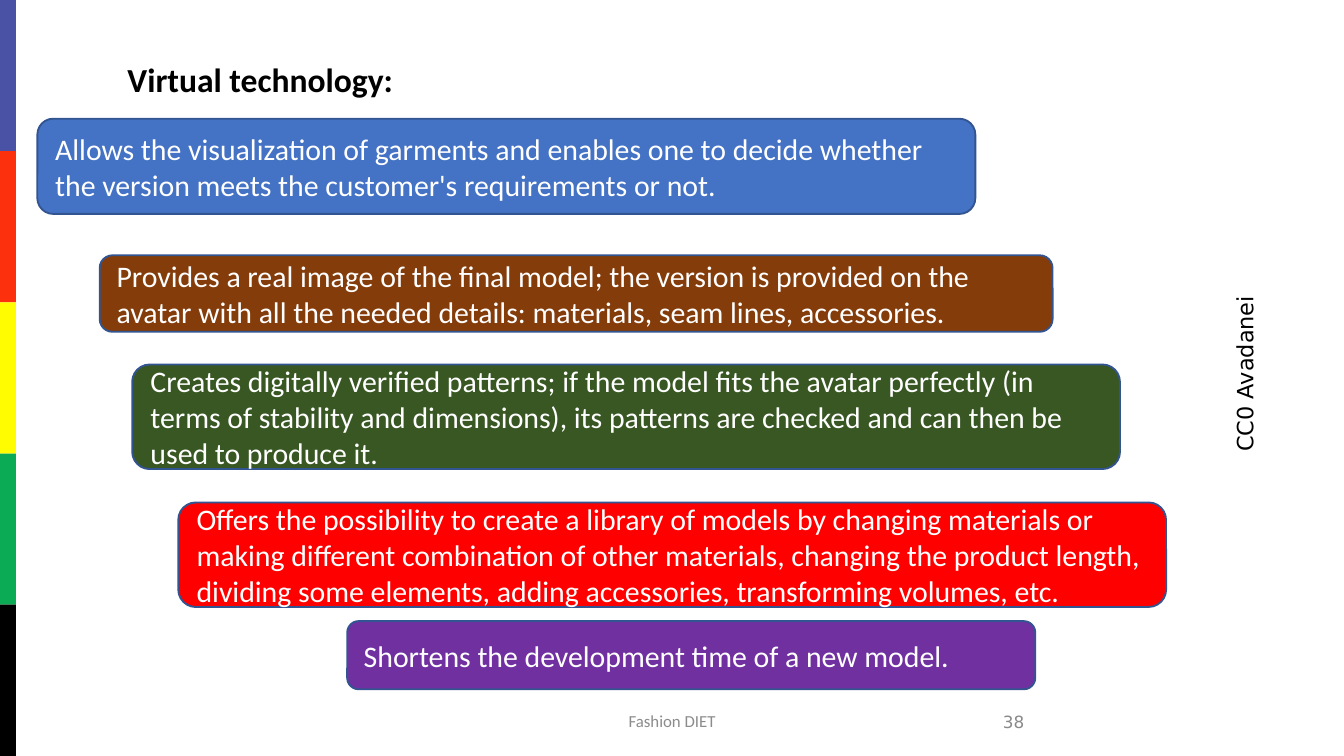
from pptx import Presentation
from pptx.dml.color import RGBColor
from pptx.enum.shapes import MSO_SHAPE as Shape
from pptx.enum.text import MSO_ANCHOR as Anchor, PP_ALIGN as Align
from pptx.util import Pt


def color(value):
    return RGBColor.from_string(value)


def write(shape, text, font_format, align=Align.LEFT, anchor=Anchor.MIDDLE):
    frame = shape.text_frame
    frame.word_wrap = True
    frame.vertical_anchor = anchor
    paragraph = frame.paragraphs[0]
    paragraph.alignment = align
    run = paragraph.add_run()
    run.text = text
    for name, value in font_format.items():
        if name == "color":
            run.font.color.rgb = color(value)
        else:
            setattr(run.font, name, value)


presentation = Presentation()
presentation.slide_width = Pt(720)
presentation.slide_height = Pt(405)
slide = presentation.slides.add_slide(presentation.slide_layouts[6])

# Colour stripe down the left edge
stripe_colors = ["4952A4", "FC300D", "FFFB00", "0BAA54", "000000"]
stripe_height = 405 / len(stripe_colors)
for index, fill in enumerate(stripe_colors):
    shape = slide.shapes.add_shape(
        Shape.RECTANGLE, 0, Pt(index * stripe_height), Pt(8.6), Pt(stripe_height))
    shape.shadow.inherit = False
    shape.fill.solid()
    shape.fill.fore_color.rgb = color(fill)
    shape.line.fill.background()

# Title, footer, page number and vertical credit
title_format = {"name": "Calibri", "size": Pt(18), "bold": True, "color": "000000"}
footer_format = {"name": "Calibri", "size": Pt(9), "color": "8C8C8C"}
number_format = {"name": "DejaVu Sans", "size": Pt(9), "color": "898989"}
credit_format = {"name": "DejaVu Sans", "size": Pt(12), "color": "000000"}
labels = [
    ("Virtual technology:", (61.2, 28.2, 211.7, 29), title_format, Align.LEFT, Anchor.TOP, 0),
    ("Fashion DIET", (238.5, 375.4, 243, 21.6), footer_format, Align.CENTER, Anchor.MIDDLE, 0),
    ("38", (393.8, 375.8, 162, 21.6), number_format, Align.RIGHT, Anchor.MIDDLE, 0),
    ("CC0 Avadanei", (612, 183.6, 109.4, 21.6), credit_format, Align.LEFT, Anchor.TOP, 270),
]
for text, box, font_format, align, anchor, rotation in labels:
    shape = slide.shapes.add_textbox(*map(Pt, box))
    shape.rotation = rotation
    write(shape, text, font_format, align, anchor)

# Staggered benefit boxes
benefit_format = {"name": "Calibri", "size": Pt(16), "color": "FFFFFF"}
benefits = [
    ("Allows the visualization of garments and enables one to decide whether the version "
     "meets the customer's requirements or not.",
     (20, 63.6, 502.5, 51), "4472C4"),
    ("Provides a real image of the final model; the version is provided on the avatar "
     "with all the needed details: materials, seam lines, accessories.",
     (53.4, 136.8, 510.5, 41), "843C0B"),
    ("Creates digitally verified patterns; if the model fits the avatar perfectly (in terms "
     "of stability and dimensions), its patterns are checked and can then be used to produce it.",
     (70.8, 195.3, 529.2, 56), "385723"),
    ("Offers the possibility to create a library of models by changing materials or making "
     "different combination of other materials, changing the product length, dividing some "
     "elements, adding accessories, transforming volumes, etc.",
     (95.5, 269.2, 529.2, 56), "FF0000"),
    ("Shortens the development time of a new model.",
     (186, 332.8, 368.6, 36.5), "7030A0"),
]
for text, box, fill in benefits:
    shape = slide.shapes.add_shape(Shape.ROUNDED_RECTANGLE, *map(Pt, box))
    shape.shadow.inherit = False
    shape.fill.solid()
    shape.fill.fore_color.rgb = color(fill)
    shape.line.color.rgb = color("325491")
    shape.line.width = Pt(1)
    write(shape, text, benefit_format)

presentation.save("out.pptx")
